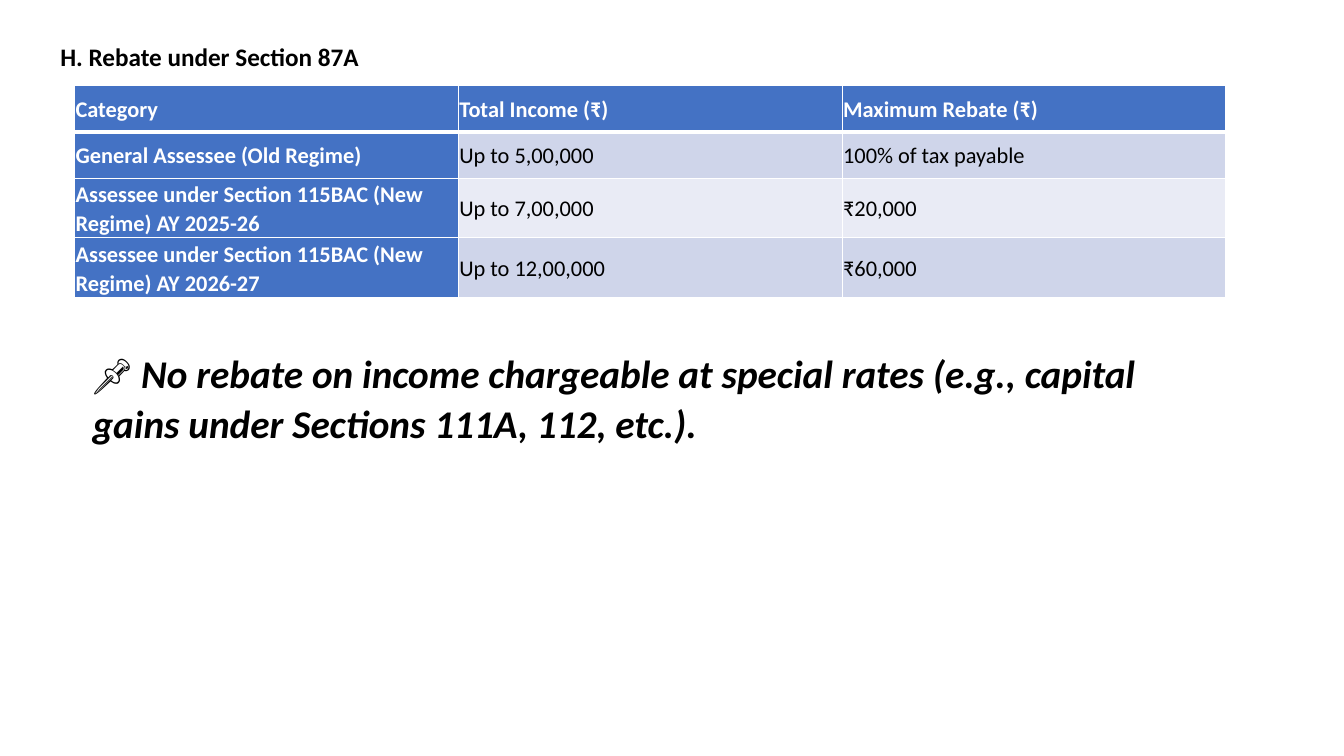
import pptx
import pptx.dml.color
import pptx.enum.text
import pptx.oxml
import pptx.oxml.ns
import pptx.util
from pptx.util import Inches

BLACK = pptx.dml.color.RGBColor(0x00, 0x00, 0x00)
WHITE = pptx.dml.color.RGBColor(0xFF, 0xFF, 0xFF)
BLUE = pptx.dml.color.RGBColor(0x44, 0x72, 0xC4)
BAND_DARK = pptx.dml.color.RGBColor(0xCF, 0xD5, 0xEA)
BAND_LIGHT = pptx.dml.color.RGBColor(0xE9, 0xEB, 0xF5)

REBATES = [
    ("Category", "Total Income (₹)", "Maximum Rebate (₹)"),
    ("General Assessee (Old Regime)", "Up to 5,00,000", "100% of tax payable"),
    ("Assessee under Section 115BAC (New Regime) AY 2025-26", "Up to 7,00,000", "₹20,000"),
    ("Assessee under Section 115BAC (New Regime) AY 2026-27", "Up to 12,00,000", "₹60,000"),
]


def write_spans(frame, spans, size, color=BLACK):
    """Fill the frame's first paragraph with (text, font settings) spans."""
    frame.word_wrap = True
    para = frame.paragraphs[0]
    para.line_spacing = 1.07
    para.space_after = pptx.util.Pt(8)
    for text, settings in spans:
        span = para.add_run()
        span.text = text
        span.font.size = pptx.util.Pt(size)
        span.font.color.rgb = color
        for name, value in settings.items():
            setattr(span.font, name, value)


def set_border(cell, side, points):
    line = pptx.oxml.parse_xml(
        f'<a:ln{side} {pptx.oxml.ns.nsdecls("a")} w="{pptx.util.Pt(points)}">'
        f'<a:solidFill><a:srgbClr val="{WHITE}"/></a:solidFill></a:ln{side}>'
    )
    cell._tc.get_or_add_tcPr().append(line)


deck = pptx.Presentation()
deck.slide_width = Inches(13.33)
deck.slide_height = Inches(7.5)
page = deck.slides.add_slide(deck.slide_layouts[6])

# Heading
heading = page.shapes.add_textbox(Inches(0.5), Inches(0.34), Inches(6.67), Inches(0.41))
write_spans(heading.text_frame,
            [("H. Rebate under Section 87A", {"name": "Calibri", "bold": True})], 18)

# Rebate table
table = page.shapes.add_table(len(REBATES), len(REBATES[0]), Inches(0.74), Inches(0.85),
                              Inches(11.42), Inches(1.84)).table
for row in table.rows:
    row.height = Inches(0.46)

cell_format = {
    "vertical_anchor": pptx.enum.text.MSO_ANCHOR.MIDDLE,
    "margin_left": Inches(0.01),
    "margin_right": Inches(0.01),
    "margin_top": Inches(0.01),
    "margin_bottom": Inches(0.01),
}
for row_index, texts in enumerate(REBATES):
    for column_index, text in enumerate(texts):
        cell = table.cell(row_index, column_index)
        for name, value in cell_format.items():
            setattr(cell, name, value)
        is_header = row_index == 0 or column_index == 0
        write_spans(cell.text_frame, [(text, {"name": "Calibri", "bold": is_header})], 16,
                    WHITE if is_header else BLACK)
        for side in "LRTB":
            under_header = (row_index, side) in [(0, "B"), (1, "T")]
            set_border(cell, side, 3 if under_header else 1)
        band = BAND_DARK if row_index % 2 else BAND_LIGHT
        cell.fill.solid()
        cell.fill.fore_color.rgb = BLUE if is_header else band

# Note on special rates
note = page.shapes.add_textbox(Inches(0.82), Inches(3.38), Inches(11.42), Inches(1.09))
write_spans(note.text_frame, [
    ("📌 ", {"name": "Roboto", "bold": True}),
    ("No rebate on income chargeable at special rates "
     "(e.g., capital gains under Sections 111A, 112, etc.).",
     {"name": "Calibri", "bold": True, "italic": True}),
], 28)

for box in (heading, note):
    box.text_frame.auto_size = pptx.enum.text.MSO_AUTO_SIZE.SHAPE_TO_FIT_TEXT

deck.save("out.pptx")
